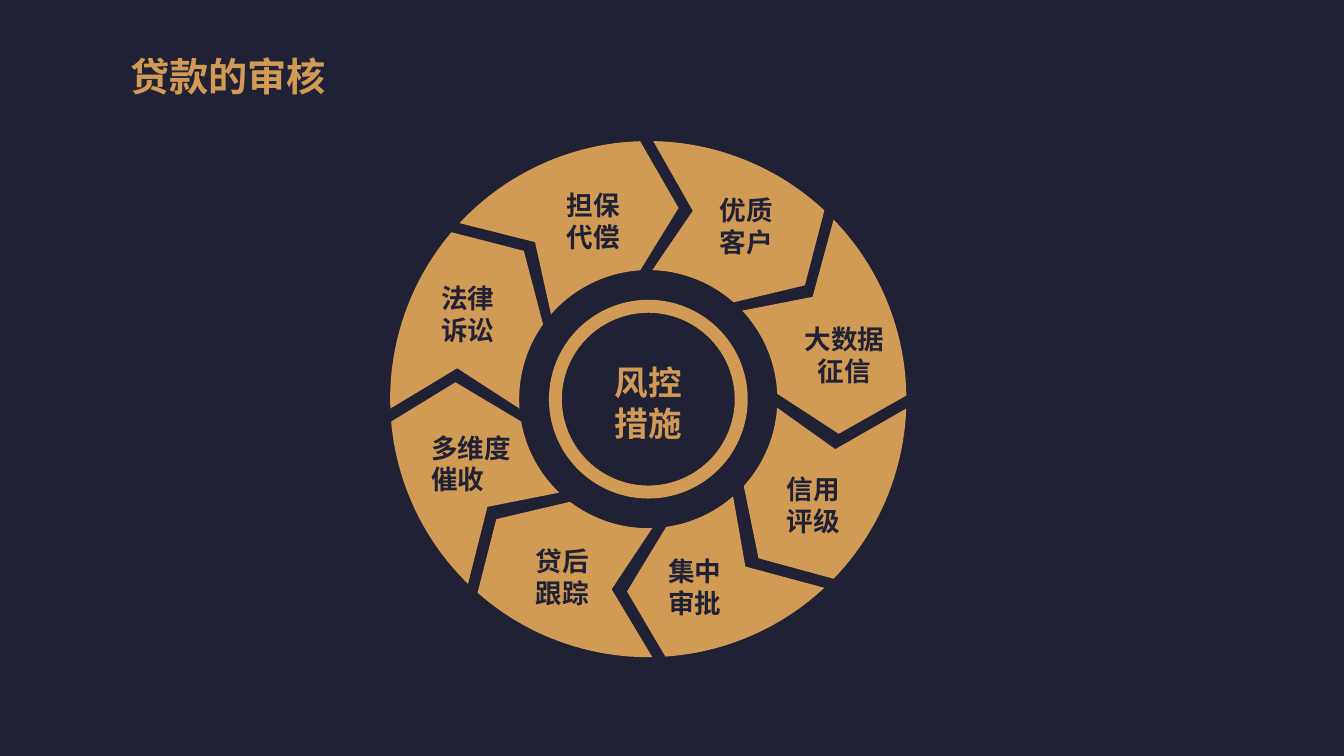
from math import cos, radians, sin

from lxml import etree
from pptx import Presentation
from pptx.dml.color import RGBColor
from pptx.enum.shapes import MSO_SHAPE
from pptx.enum.text import MSO_ANCHOR, MSO_AUTO_SIZE, PP_ALIGN
from pptx.oxml.ns import qn
from pptx.util import Inches, Pt

DONUT = MSO_SHAPE.DONUT
LEFT, CENTER = PP_ALIGN.LEFT, PP_ALIGN.CENTER
TOP, MIDDLE = MSO_ANCHOR.TOP, MSO_ANCHOR.MIDDLE
NO_AUTOFIT = MSO_AUTO_SIZE.NONE

WIDTH, HEIGHT = 13.33, 7.5
FONT = "Noto Sans CJK SC"
NAVY, GOLD = "202135", "D19B55"
LINE_PITCH = 1.2
TITLE_ONLY = 5
ARC_STEPS = 24

# Radii as shares of the wheel's half width
OUTER, BEND, INNER = 1, 0.75, 0.5
RING_SHARE, RING_BAND = 0.385, 0.065

# Angles clockwise from twelve o'clock: the outer arc's start and end, the tip,
# the inner arc's end and start, the notch
SEGMENTS = [
    (313.0, 358.2, 369.0, 356.4, 311.1, 324.2),
    (1.1, 43.0, 54.0, 41.4, 1.8, 13.3),
    (45.9, 89.2, 100.3, 87.6, 46.7, 58.1),
    (92.1, 134.1, 145.3, 132.3, 93.8, 105.0),
    (137.0, 176.2, 186.3, 172.0, 138.9, 149.9),
    (179.1, 221.4, 231.7, 217.3, 178.2, 190.9),
    (224.3, 265.0, 275.0, 260.0, 223.6, 236.2),
    (267.9, 310.3, 320.0, 305.4, 265.8, 279.2),
]

# Text, centre as shares of the wheel's box, width in inches, alignment
LABELS = [
    ("优质客户", 0.69, 0.16, 0.79, CENTER),
    ("大数据征信", 0.88, 0.41, 1.02, CENTER),
    ("信用评级", 0.82, 0.7, 0.79, CENTER),
    ("集中审批", 0.59, 0.86, 0.79, CENTER),
    ("贷后跟踪", 0.34, 0.84, 0.79, LEFT),
    ("多维度催收", 0.16, 0.62, 1.02, LEFT),
    ("法律诉讼", 0.15, 0.33, 0.79, CENTER),
    ("担保代偿", 0.4, 0.15, 0.79, LEFT),
]
LABEL_HEIGHT = 0.74


def color(hex_text):
    return RGBColor.from_string(hex_text)


def paint(shape, hex_text):
    shape.shadow.inherit = False
    shape.fill.solid()
    shape.fill.fore_color.rgb = color(hex_text)
    shape.line.fill.background()


def write(shape, *lines, size, ink, align=LEFT, anchor=TOP):
    frame = shape.text_frame
    frame.word_wrap = True
    frame.auto_size = NO_AUTOFIT
    frame.vertical_anchor = anchor
    # The fixed line pitch lifts the glyphs, so the margins lower them again
    drop = Pt(size * 0.1)
    frame.margin_top = Inches(0.05) + drop
    frame.margin_bottom = Inches(0.05) - drop
    for index, line in enumerate(lines):
        para = frame.add_paragraph() if index else frame.paragraphs[0]
        para.alignment = align
        para.line_spacing = Pt(size * LINE_PITCH)
        para.space_before = Pt(0)
        span = para.add_run()
        span.text = line
        span.font.size = Pt(size)
        span.font.bold = True
        span.font.name = FONT
        span.font.color.rgb = color(ink)
        east_asian = etree.SubElement(span._r.get_or_add_rPr(), qn("a:ea"))
        east_asian.set("typeface", FONT)


def place_title(page, box, text):
    title = page.shapes.title
    title.left, title.top, title.width, title.height = map(Inches, box)
    write(title, text, size=28, ink=GOLD)


def draw_segment(page, box, angles):
    left, top, side, _ = box
    half = side / 2

    def point(angle, share):
        turn = radians(angle)
        return (Inches(left + half + half * share * sin(turn)),
                Inches(top + half - half * share * cos(turn)))

    def arc(start, end, share):
        step = (end - start) / ARC_STEPS
        return [point(start + step * i, share) for i in range(ARC_STEPS + 1)]

    outer_start, outer_end, tip, inner_end, inner_start, notch = angles
    outline = [*arc(outer_start, outer_end, OUTER), point(tip, BEND),
               *arc(inner_end, inner_start, INNER), point(notch, BEND)]
    builder = page.shapes.build_freeform(*outline[0])
    builder.add_line_segments(outline[1:], close=True)
    paint(builder.convert_to_shape(), GOLD)


def draw_labels(page, box):
    left, top, side, _ = box
    for text, across, down, width, align in LABELS:
        label = page.shapes.add_textbox(
            Inches(left + across * side - width / 2),
            Inches(top + down * side - LABEL_HEIGHT / 2),
            Inches(width), Inches(LABEL_HEIGHT))
        write(label, text, size=19, ink=NAVY, align=align)


def draw_hub(page, box):
    left, top, side, _ = box
    ring_side = side * RING_SHARE
    inset = (side - ring_side) / 2
    ring = page.shapes.add_shape(DONUT, Inches(left + inset), Inches(top + inset),
                                 Inches(ring_side), Inches(ring_side))
    ring.adjustments[0] = RING_BAND
    paint(ring, GOLD)
    write(ring, "风控", "措施", size=24, ink=GOLD, align=CENTER, anchor=MIDDLE)


def draw_wheel(page, box):
    for angles in SEGMENTS:
        draw_segment(page, box, angles)
    draw_labels(page, box)
    draw_hub(page, box)


def main():
    deck = Presentation()
    deck.slide_width, deck.slide_height = Inches(WIDTH), Inches(HEIGHT)
    page = deck.slides.add_slide(deck.slide_layouts[TITLE_ONLY])
    page.background.fill.solid()
    page.background.fill.fore_color.rgb = color(NAVY)
    place_title(page, (1.19, 0.43, 4.61, 0.57), "贷款的审核")
    draw_wheel(page, (3.87, 1.4, 5.12, 5.12))
    deck.save("out.pptx")


if __name__ == "__main__":
    main()
